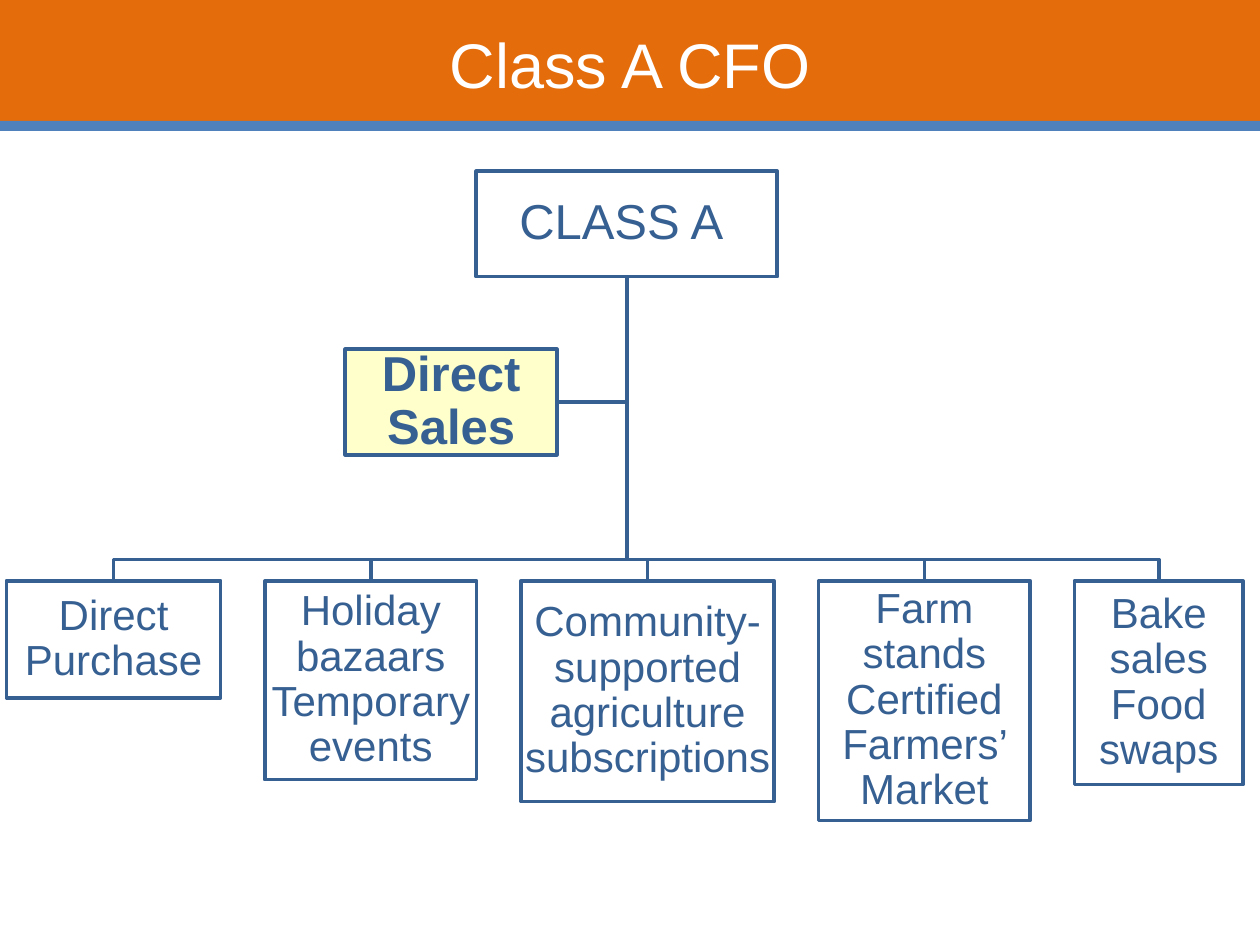
from pptx import Presentation
from pptx.dml.color import RGBColor
from pptx.enum.shapes import MSO_SHAPE
from pptx.enum.text import MSO_ANCHOR, MSO_AUTO_SIZE, PP_ALIGN
from pptx.util import Cm, Pt

RECT = MSO_SHAPE.RECTANGLE
MIDDLE, CENTER = MSO_ANCHOR.MIDDLE, PP_ALIGN.CENTER
ORANGE = RGBColor(0xE4, 0x6C, 0x0A)
BLUE = RGBColor(0x4F, 0x81, 0xBD)
NAVY = RGBColor(0x37, 0x60, 0x92)
CREAM = RGBColor(0xFF, 0xFF, 0xCC)
WHITE = RGBColor(0xFF, 0xFF, 0xFF)

# Content: sales channels as text, width, height (cm)
TITLE = "Class A CFO"
ROOT = "CLASS A "
ASSISTANT = "Direct Sales"
CHANNELS = [
    ("Direct Purchase", 4.32, 2.36),
    ("Holiday bazaars Temporary events", 4.27, 4.01),
    ("Community-supported agriculture subscriptions", 5.11, 4.45),
    ("Farm stands Certified Farmers’ Market", 4.27, 4.83),
    ("Bake sales Food swaps", 3.4, 4.11),
]

# Layout (cm): left, top, width, height
SLIDE_W, SLIDE_H = 25.4, 19.05
ROOT_BOX = (9.6, 3.45, 6.07, 2.13)
ASSISTANT_BOX = (6.96, 7.04, 4.27, 2.13)
ROW_LEFT, ROW_TOP, ROW_GAP = 0.13, 11.71, 0.89
BUS_Y = 11.28


def set_text(sp, text, size, color, bold=False, inset=None, spacing=None):
    tf = sp.text_frame
    frame = {"word_wrap": True, "auto_size": MSO_AUTO_SIZE.NONE,
             "vertical_anchor": MIDDLE}
    if inset is not None:
        for side in ("left", "top", "right", "bottom"):
            frame["margin_" + side] = Cm(inset)
    for name, value in frame.items():
        setattr(tf, name, value)
    p = tf.paragraphs[0]
    p.alignment = CENTER
    if spacing:
        p.line_spacing = spacing
    r = p.add_run()
    r.text = text
    for name, value in {"name": "Arial", "size": Pt(size), "bold": bold}.items():
        setattr(r.font, name, value)
    r.font.color.rgb = color


def set_outline(sp):
    sp.shadow.inherit = False
    sp.line.color.rgb = NAVY
    sp.line.width = Pt(2)


def add_box(slide, box, text, size, fill=None, bold=False):
    sp = slide.shapes.add_shape(RECT, *map(Cm, box))
    set_outline(sp)
    if fill is None:
        sp.fill.background()
    else:
        sp.fill.solid()
        sp.fill.fore_color.rgb = fill
    set_text(sp, text, size, NAVY, bold, inset=0.04, spacing=0.9)


def add_branch(slide, points):
    start, *rest = [(Cm(x), Cm(y)) for x, y in points]
    builder = slide.shapes.build_freeform(*start)
    builder.add_line_segments(rest, close=False)
    sp = builder.convert_to_shape()
    sp.fill.background()
    set_outline(sp)


def main():
    prs = Presentation()
    prs.slide_width, prs.slide_height = Cm(SLIDE_W), Cm(SLIDE_H)
    slide = prs.slides.add_slide(prs.slide_layouts[5])

    # Title banner and stripe
    title = slide.shapes.title
    title.left, title.top, title.width, title.height = map(Cm, (0, 0, SLIDE_W, 2.57))
    title.fill.solid()
    title.fill.fore_color.rgb = ORANGE
    set_text(title, TITLE, 36, WHITE)
    stripe = slide.shapes.add_shape(RECT, Cm(0), Cm(2.44), Cm(SLIDE_W), Cm(0.2))
    stripe.shadow.inherit = False
    stripe.fill.solid()
    stripe.fill.fore_color.rgb = BLUE
    stripe.line.fill.background()

    # Place the channel row
    row, x = [], ROW_LEFT
    for text, w, h in CHANNELS:
        row.append((text, (x, ROW_TOP, w, h)))
        x += w + ROW_GAP

    # Branches, behind the boxes
    left, top, w, h = ROOT_BOX
    trunk_x, trunk_y = left + w / 2, top + h
    left, top, w, h = ASSISTANT_BOX
    side_y = top + h / 2
    add_branch(slide, [(trunk_x, trunk_y), (trunk_x, side_y), (left + w, side_y)])
    for _, (left, top, w, h) in row:
        mid = left + w / 2
        add_branch(slide, [(trunk_x, trunk_y), (trunk_x, BUS_Y), (mid, BUS_Y), (mid, top)])

    # Boxes
    add_box(slide, ROOT_BOX, ROOT, 28)
    for text, box in row:
        add_box(slide, box, text, 24)
    add_box(slide, ASSISTANT_BOX, ASSISTANT, 28, fill=CREAM, bold=True)

    prs.save("out.pptx")


if __name__ == "__main__":
    main()
